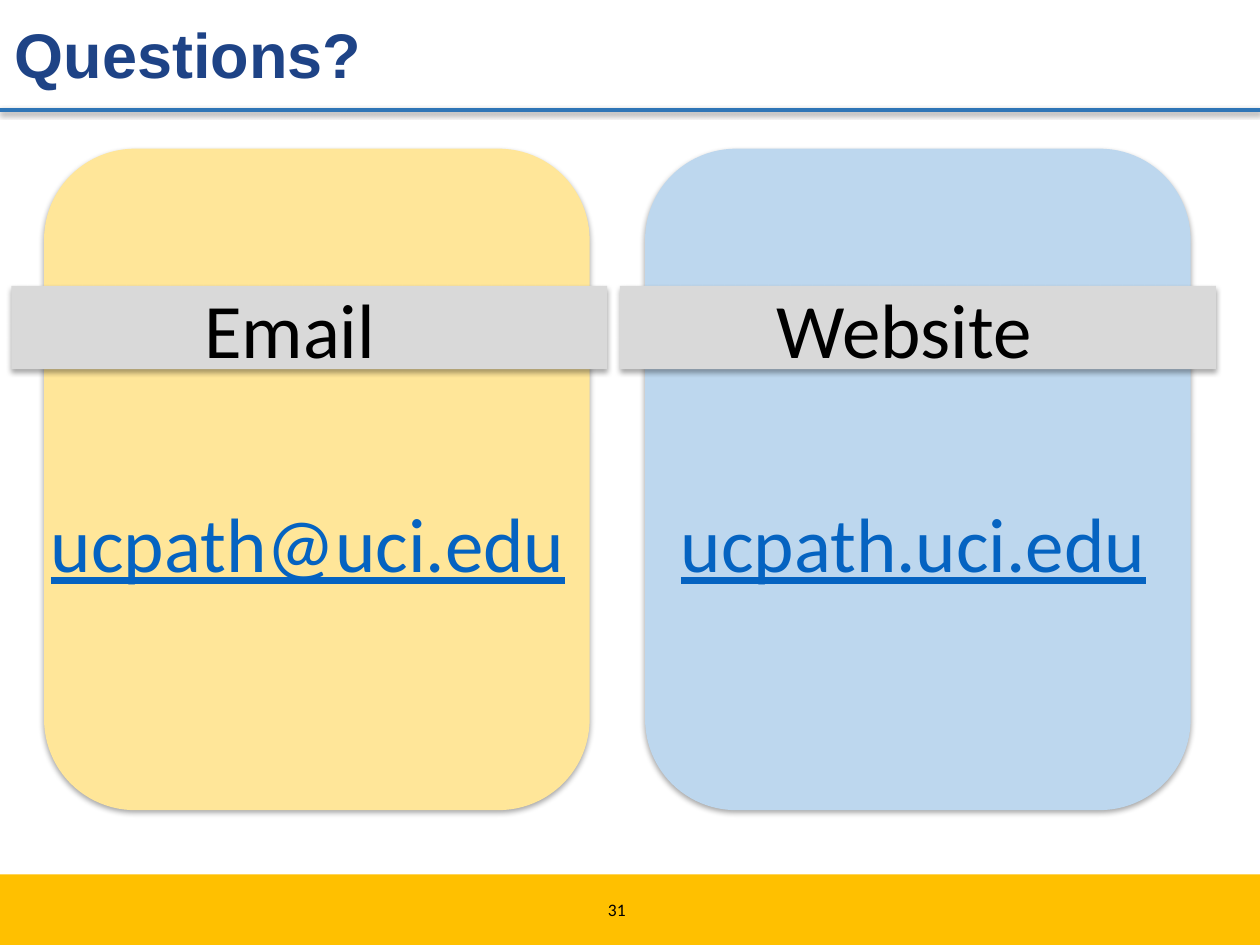
import pptx
import pptx.util
import pptx.dml.color
import pptx.enum.shapes
import pptx.enum.text
import pptx.oxml

Inches, Pt = pptx.util.Inches, pptx.util.Pt
Shape = pptx.enum.shapes.MSO_SHAPE
Align = pptx.enum.text.PP_ALIGN
NAMESPACE = "http://schemas.openxmlformats.org/drawingml/2006/main"


def color(hex_code):
    return pptx.dml.color.RGBColor.from_string(hex_code)


def add_shadow(shape, opacity, blur, distance):
    """Give a shape a soft shadow straight below it."""
    shape._element.spPr.append(pptx.oxml.parse_xml(
        f'<a:effectLst xmlns:a="{NAMESPACE}"><a:outerShdw blurRad="{Pt(blur)}" '
        f'dist="{Pt(distance)}" dir="5400000" algn="ctr" rotWithShape="0">'
        f'<a:srgbClr val="000000"><a:alpha val="{opacity * 1000}"/></a:srgbClr>'
        '</a:outerShdw></a:effectLst>'))


presentation = pptx.Presentation()
presentation.slide_width, presentation.slide_height = Inches(10), Inches(7.5)
slide = presentation.slides.add_slide(presentation.slide_layouts[6])
shapes = slide.shapes

# Footer band and rule below the title
footer = shapes.add_shape(Shape.RECTANGLE, Inches(-0.02), Inches(6.94), Inches(10.02), Inches(0.56))
footer.shadow.inherit = False
footer.fill.solid()
footer.fill.fore_color.rgb = color("FFC000")
footer.line.fill.background()

rule = shapes.add_connector(pptx.enum.shapes.MSO_CONNECTOR.STRAIGHT,
                            0, Inches(0.87), Inches(10), Inches(0.87))
rule.line.color.rgb = color("2E75B6")
rule.line.width = Pt(2.25)
add_shadow(rule, 38, 3.1, 1.6)

# Contact columns: panel left, panel fill, bar left, heading, right inset
columns = [
    (0.35, "FFE699", 0.09, "Email", 0.31),
    (5.12, "BDD7EE", 4.92, "Website", 0.22),
]
# Text in place: shape, text, left and right inset, font, size, colour, alignment
labels = []
for panel_left, panel_fill, bar_left, heading, inset in columns:
    for kind, left, top, width, height, fill in (
            (Shape.ROUNDED_RECTANGLE, panel_left, 1.18, 4.33, 5.25, panel_fill),
            (Shape.RECTANGLE, bar_left, 2.27, 4.73, 0.66, "D9D9D9")):
        shape = shapes.add_shape(kind, Inches(left), Inches(top), Inches(width), Inches(height))
        shape.fill.solid()
        shape.fill.fore_color.rgb = color(fill)
        shape.line.fill.background()
        add_shadow(shape, 35, 3.1, 1.8)
    labels.append((shape, heading, 0, inset, "Calibri", 44, "000000", Align.CENTER))

# Title, addresses and slide number
text_boxes = [
    ("Questions?", 0.02, 0.08, 8.89, 0.68, 0.1, "Arial", 36, "1E4386", Align.LEFT),
    ("ucpath@uci.edu", 0.29, 3.88, 4.31, 0.84, 0.05, "Calibri", 44, "0563C1", Align.CENTER),
    ("ucpath.uci.edu", 5.05, 3.88, 4.40, 0.84, 0.05, "Calibri", 44, "0563C1", Align.CENTER),
    ("31", 4.67, 7.02, 0.45, 0.40, 0, "Calibri", 10, "000000", Align.CENTER),
]
for text, left, top, width, height, margin, *style in text_boxes:
    text_box = shapes.add_textbox(Inches(left), Inches(top), Inches(width), Inches(height))
    labels.append((text_box, text, margin, margin, *style))

for shape, text, left_inset, right_inset, font_name, size, font_color, alignment in labels:
    frame = shape.text_frame
    frame.word_wrap = True
    frame.vertical_anchor = pptx.enum.text.MSO_ANCHOR.MIDDLE
    frame.margin_left, frame.margin_right = Inches(left_inset), Inches(right_inset)
    frame.margin_top = frame.margin_bottom = 0
    frame.text = text
    paragraph = frame.paragraphs[0]
    paragraph.alignment = alignment
    paragraph.font.name = font_name
    paragraph.font.size = Pt(size)
    paragraph.font.bold = font_name == "Arial"
    paragraph.font.underline = font_color == "0563C1"
    paragraph.font.color.rgb = color(font_color)

presentation.save("out.pptx")
